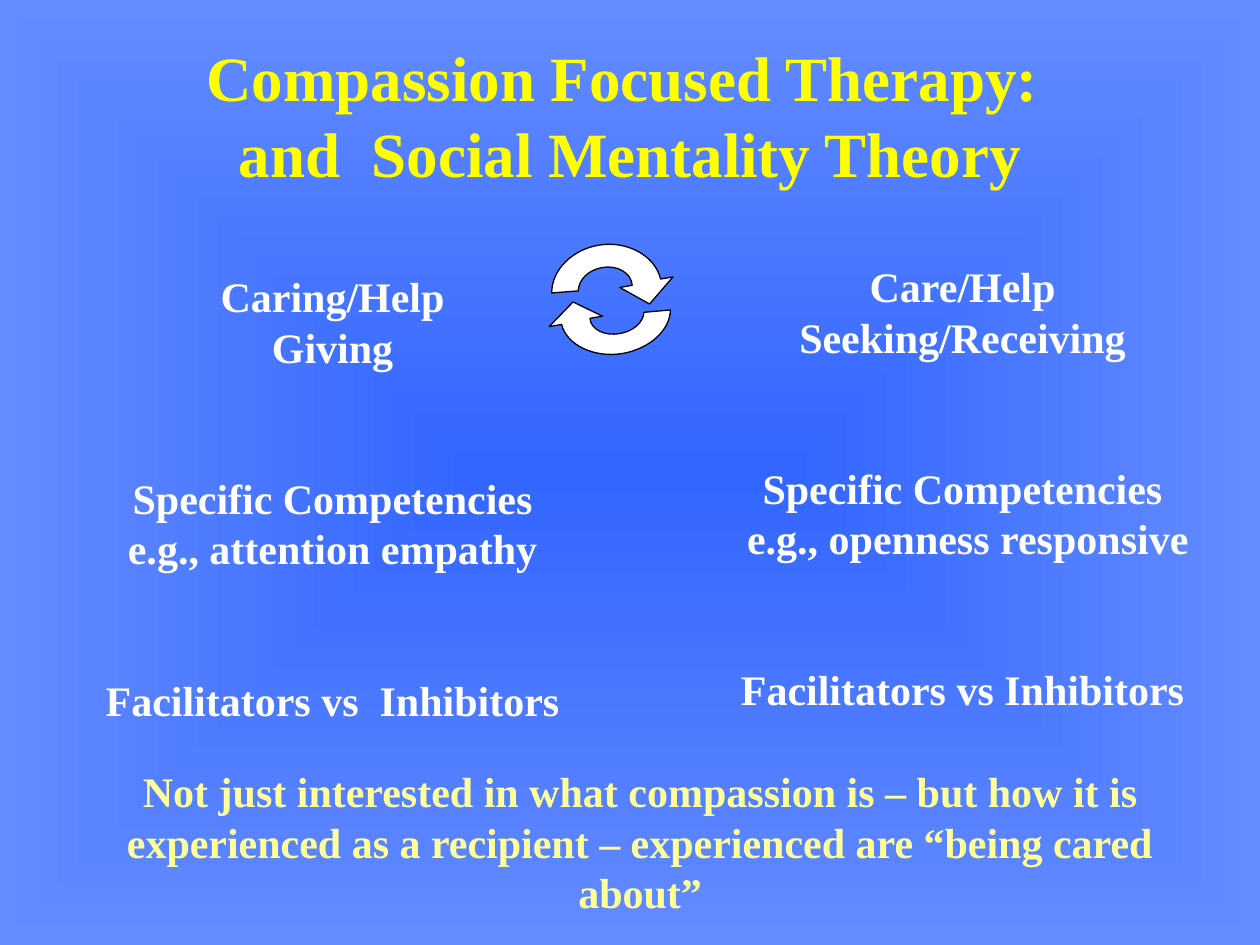
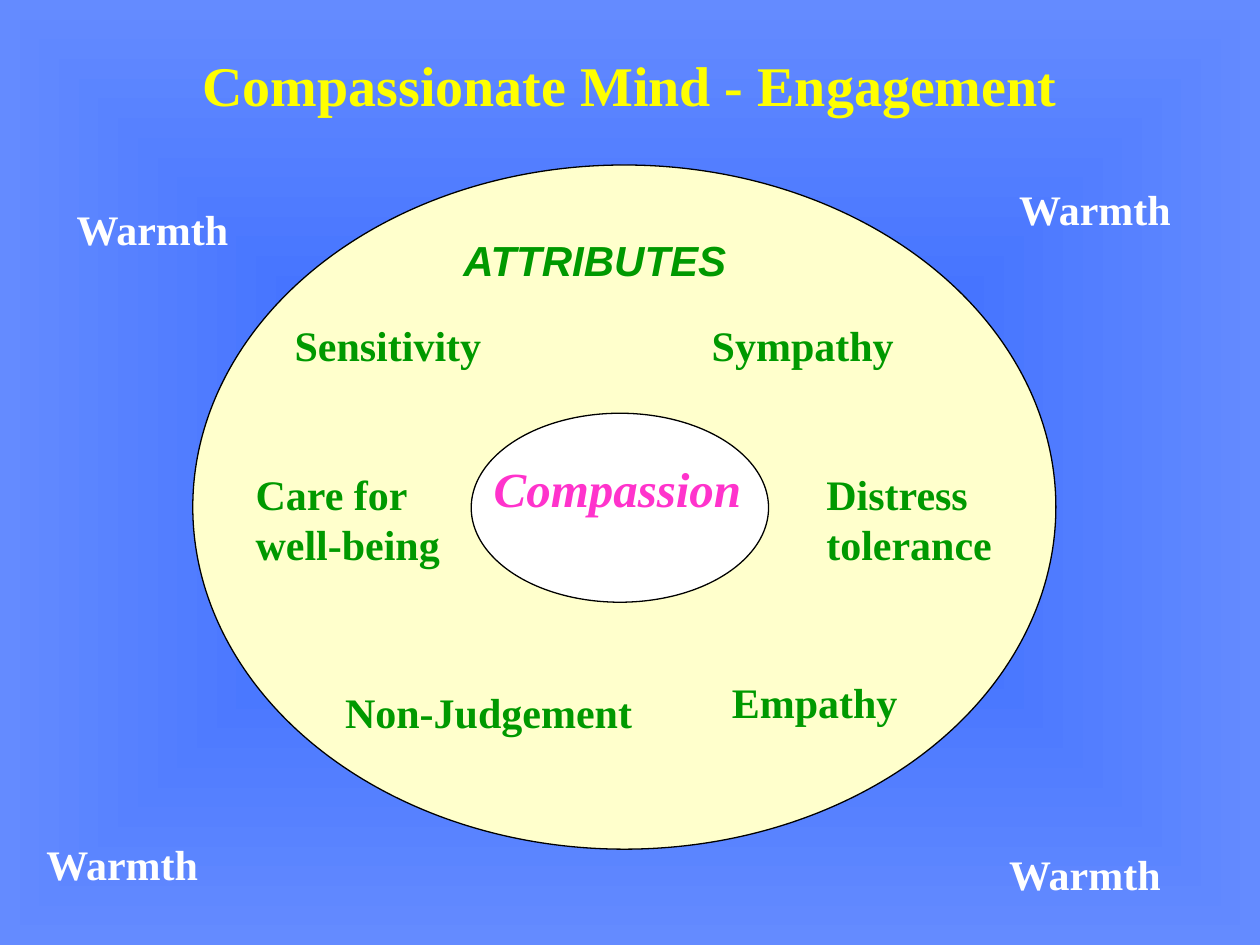
from dataclasses import dataclass

from lxml import etree
from pptx import Presentation
from pptx.dml.color import RGBColor
from pptx.enum.shapes import MSO_SHAPE
from pptx.enum.text import MSO_ANCHOR, PP_ALIGN
from pptx.oxml import parse_xml
from pptx.presentation import Presentation as Deck
from pptx.shapes.base import BaseShape
from pptx.slide import Slide
from pptx.util import Inches, Pt

LEFT, CENTER = PP_ALIGN.LEFT, PP_ALIGN.CENTER
TOP, MIDDLE = MSO_ANCHOR.TOP, MSO_ANCHOR.MIDDLE
OVAL = MSO_SHAPE.OVAL

CORE_BLUE = RGBColor(0x33, 0x66, 0xFF)
EDGE_BLUE = RGBColor(0x64, 0x8B, 0xFF)
YELLOW = RGBColor(0xFF, 0xFF, 0x00)
PALE_YELLOW = RGBColor(0xFF, 0xFF, 0x99)
CREAM = RGBColor(0xFF, 0xFF, 0xCC)
WHITE = RGBColor(0xFF, 0xFF, 0xFF)
BLACK = RGBColor(0x00, 0x00, 0x00)
GREEN = RGBColor(0x00, 0x99, 0x00)
PINK = RGBColor(0xFF, 0x33, 0xCC)

SERIF, SANS = "Times New Roman", "Arial"
GROUP_GAP = Pt(57.6)  # two lines of 24 pt text
DRAWING_NS = "http://schemas.openxmlformats.org/drawingml/2006/main"


@dataclass(frozen=True)
class Label:
    """Bold text; each entry of groups is a block set apart by GROUP_GAP."""
    groups: tuple[str, ...]
    left: float
    top: float
    width: float
    height: float
    color: RGBColor = GREEN
    size: int = 24
    font: str = SERIF
    italic: bool = False
    align: PP_ALIGN = LEFT
    anchor: MSO_ANCHOR = TOP
    line_spacing: float = 1.0


@dataclass(frozen=True)
class Ellipse:
    left: float
    top: float
    width: float
    height: float
    fill: RGBColor


@dataclass(frozen=True)
class CycleArrow:
    left: float
    top: float
    width: float
    height: float
    rotation: float


def title(text: str, top: float, height: float, size: int) -> Label:
    return Label((text,), 0.75, top, 8.5, height, YELLOW, size,
                 align=CENTER, anchor=MIDDLE)


def role_column(groups: tuple[str, ...], left: float, top: float,
                width: float, height: float) -> Label:
    return Label(groups, left, top, width, height, WHITE, align=CENTER)


def warmth(left: float, top: float, width: float) -> Label:
    return Label(("Warmth",), left, top, width, 0.46, WHITE, line_spacing=0.9)


THERAPY_PARTS = (
    title("Compassion Focused Therapy: \vand  Social Mentality Theory",
          0.36, 1.1, 36),
    role_column(("Caring/Help\nGiving",
                 "Specific Competencies\ne.g., attention empathy",
                 "Facilitators vs  Inhibitors"), 0.67, 2.1, 3.94, 3.69),
    role_column(("Care/Help Seeking/Receiving",
                 "Specific Competencies\n e.g., openness responsive",
                 "Facilitators vs Inhibitors"), 5.71, 2.02, 3.86, 4.03),
    CycleArrow(4.38, 1.94, 0.87, 0.71, 350.1),
    CycleArrow(4.45, 2.18, 0.87, 0.63, 170.1),
    Label(("Not just interested in what compassion is – but how it is "
           "experienced as a recipient – experienced are “being cared about”",),
          0.67, 6.03, 8.82, 1.3, PALE_YELLOW, align=CENTER),
)

MIND_PARTS = (
    title("Compassionate Mind - Engagement", 0.21, 0.92, 32),
    Ellipse(1.53, 1.31, 6.85, 5.43, CREAM),
    Label(("Care for well-being",), 1.93, 3.67, 1.89, 0.9),
    Label(("Sensitivity",), 2.24, 2.49, 2.13, 0.5),
    Label(("Sympathy",), 5.55, 2.49, 1.65, 0.5),
    Label(("Distress tolerance",), 6.46, 3.67, 1.89, 0.9),
    Label(("Empathy",), 5.71, 5.32, 1.73, 0.5),
    Label(("Non-Judgement",), 2.64, 5.4, 2.84, 0.5),
    Ellipse(3.74, 3.28, 2.36, 1.5, WHITE),
    Label(("Compassion",), 3.82, 3.59, 2.28, 0.57, PINK, 28, italic=True),
    Label(("ATTRIBUTES",), 3.58, 1.86, 2.6, 0.46, font=SANS, italic=True,
          line_spacing=0.9),
    warmth(0.51, 1.61, 1.65),
    warmth(0.27, 6.65, 1.58),
    warmth(7.99, 1.45, 1.57),
    warmth(7.91, 6.73, 2.09),
)

# Outline of a cycle arrow on a grid of this size; the head overhangs it.
ARROW_GRID = (87, 71)
ARROW_OUTLINE = (
    ("moveTo", ((64, 36),)),
    ("cubicBezTo", ((65, 26), (55, 18), (43, 18))),
    ("cubicBezTo", ((32, 18), (23, 24), (21, 33))),
    ("lnTo", ((0, 31),)),
    ("cubicBezTo", ((3, 13), (22, 0), (43, 0))),
    ("cubicBezTo", ((66, 0), (86, 16), (87, 35))),
    ("lnTo", ((97, 35),)),
    ("lnTo", ((75, 53),)),
    ("lnTo", ((54, 36),)),
    ("close", ()),
)


def drawing_tag(name: str) -> str:
    return etree.QName(DRAWING_NS, name).text


def arrow_path() -> etree.ElementBase:
    width, height = ARROW_GRID
    path = parse_xml(f'<a:path xmlns:a="{DRAWING_NS}" '
                     f'w="{width}" h="{height}"/>')
    for command, points in ARROW_OUTLINE:
        step = etree.SubElement(path, drawing_tag(command))
        for x, y in points:
            etree.SubElement(step, drawing_tag("pt"), x=str(x), y=str(y))
    return path


def style_outline(shape: BaseShape, fill: RGBColor) -> None:
    shape.shadow.inherit = False
    shape.fill.solid()
    shape.fill.fore_color.rgb = fill
    shape.line.color.rgb = BLACK
    shape.line.width = Pt(0.75)


def draw_ellipse(slide: Slide, ellipse: Ellipse) -> None:
    shape = slide.shapes.add_shape(
        OVAL, Inches(ellipse.left), Inches(ellipse.top),
        Inches(ellipse.width), Inches(ellipse.height))
    style_outline(shape, ellipse.fill)


def draw_arrow(slide: Slide, arrow: CycleArrow) -> None:
    """Build a freeform over the arrow's frame and give it the curved path."""
    left, top = Inches(arrow.left), Inches(arrow.top)
    right, bottom = left + Inches(arrow.width), top + Inches(arrow.height)
    builder = slide.shapes.build_freeform(left, top)
    builder.add_line_segments([(right, top), (right, bottom)])
    shape = builder.convert_to_shape()
    straight = next(shape.element.iter(drawing_tag("path")))
    straight.getparent().replace(straight, arrow_path())
    shape.rotation = arrow.rotation
    style_outline(shape, WHITE)


def draw_label(slide: Slide, label: Label) -> None:
    box = slide.shapes.add_textbox(Inches(label.left), Inches(label.top),
                                   Inches(label.width), Inches(label.height))
    frame = box.text_frame
    frame.word_wrap = True
    frame.vertical_anchor = label.anchor
    frame.text = "\n".join(label.groups)
    for paragraph in frame.paragraphs:
        paragraph.alignment = label.align
        paragraph.line_spacing = label.line_spacing
        for run in paragraph.runs:
            run.font.name = label.font
            run.font.size = Pt(label.size)
            run.font.bold = True
            run.font.italic = label.italic
            run.font.color.rgb = label.color
    group_start = 0
    for group in label.groups[:-1]:
        group_start += group.count("\n") + 1
        frame.paragraphs[group_start].space_before = GROUP_GAP


DRAWERS = {Label: draw_label, Ellipse: draw_ellipse, CycleArrow: draw_arrow}


def set_background(deck: Deck) -> None:
    """Give the master a gradient that spreads from the slide's centre."""
    master = deck.slide_master
    master.background.fill.solid()
    solid = next(master.element.iter(drawing_tag("solidFill")))
    gradient = parse_xml(
        f'<a:gradFill xmlns:a="{DRAWING_NS}" rotWithShape="0"><a:gsLst>'
        f'<a:gs pos="0"><a:srgbClr val="{CORE_BLUE}"/></a:gs>'
        f'<a:gs pos="100000"><a:srgbClr val="{EDGE_BLUE}"/></a:gs></a:gsLst>'
        '<a:path path="shape"><a:fillToRect l="50000" t="50000" r="50000" '
        'b="50000"/></a:path></a:gradFill>')
    solid.getparent().replace(solid, gradient)


def build_slide(deck: Deck,
                parts: tuple[Label | Ellipse | CycleArrow, ...]) -> None:
    slide = deck.slides.add_slide(deck.slide_layouts[6])
    for part in parts:
        DRAWERS[type(part)](slide, part)


def main() -> None:
    deck = Presentation()
    deck.slide_width, deck.slide_height = Inches(10), Inches(7.5)
    set_background(deck)
    for parts in (THERAPY_PARTS, MIND_PARTS):
        build_slide(deck, parts)
    deck.save("out.pptx")


if __name__ == "__main__":
    main()
